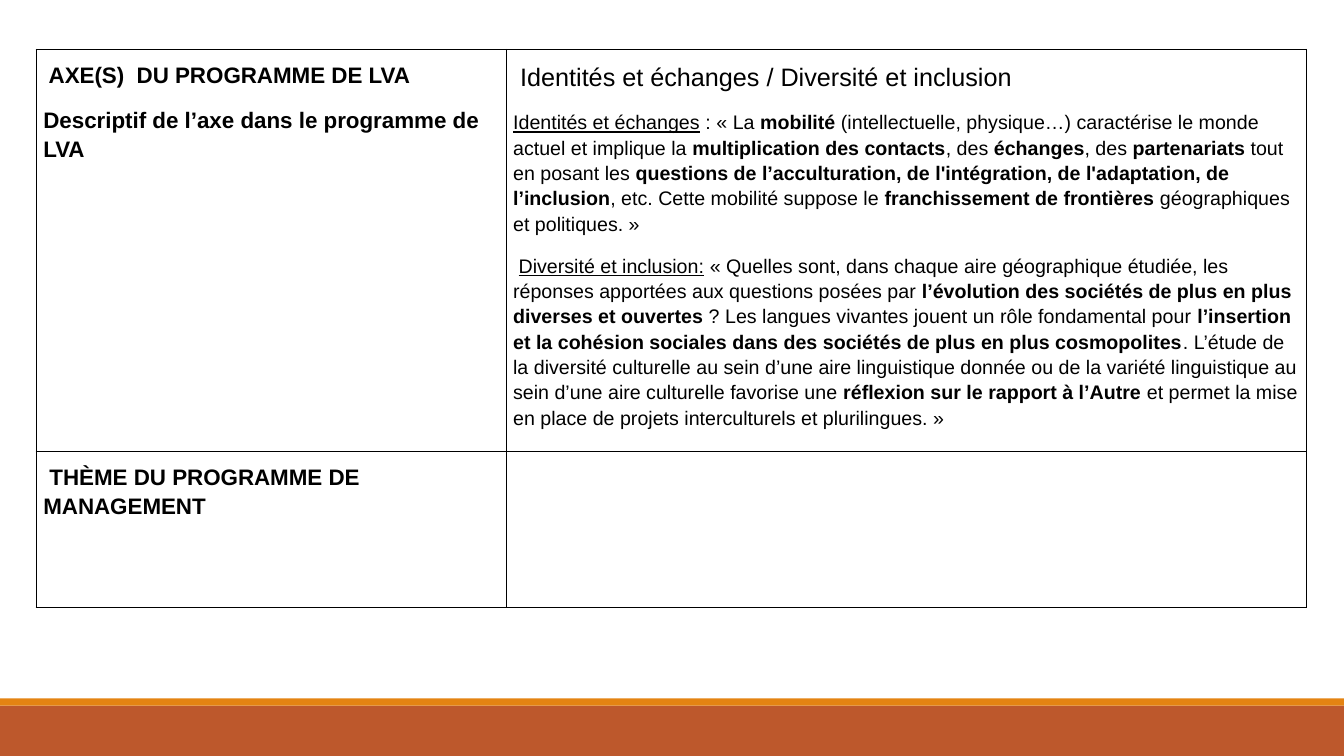
from pptx import Presentation
from pptx.dml.color import RGBColor
from pptx.enum.shapes import MSO_SHAPE
from pptx.oxml import parse_xml
from pptx.oxml.ns import nsdecls
from pptx.util import Inches, Pt

RECTANGLE = MSO_SHAPE.RECTANGLE
FONT = "Arial"
COLOURS = {"text": "000000", "border": "000000", "band": "BD582C", "stripe": "E48312"}

BANDS = [("band", 7, 0.5), ("stripe", 6.93, 0.07)]

TABLE_LEFT, TABLE_TOP = 0.36, 0.49
COLUMN_WIDTHS = [4.66, 7.94]
ROW_HEIGHTS = [3.99, 1.55]
MARGIN_SIDE, MARGIN_END = 0.07, 0.1
LINE_SPACING, GAP = 1.15, 12
BORDER_WIDTH = 1

PLAIN, BOLD, UNDERLINE = "plain", "bold", "underline"

AXIS_LABELS = [
    (16, [(" AXE(S)  DU PROGRAMME DE LVA", BOLD)]),
    (16, [("Descriptif de l’axe dans le programme de LVA", BOLD)]),
]
AXIS_TEXT = [
    (18, [(" ", BOLD), ("Identités et échanges / Diversité et inclusion", PLAIN)]),
    (14, [
        ("Identités et échanges", UNDERLINE),
        (" : « La ", PLAIN),
        ("mobilité ", BOLD),
        ("(intellectuelle, physique…) caractérise le monde actuel et implique la ", PLAIN),
        ("multiplication des contacts", BOLD),
        (", des ", PLAIN),
        ("échanges", BOLD),
        (", des ", PLAIN),
        ("partenariats", BOLD),
        (" tout en posant les ", PLAIN),
        ("questions de l’acculturation, de l'intégration, de l'adaptation, de l’inclusion", BOLD),
        (", etc. Cette mobilité suppose le ", PLAIN),
        ("franchissement de frontières ", BOLD),
        ("géographiques et politiques. »", PLAIN),
    ]),
    (14, [
        (" ", PLAIN),
        ("Diversité et inclusion:", UNDERLINE),
        (" « Quelles sont, dans chaque aire géographique étudiée, les réponses apportées "
         "aux questions posées par ", PLAIN),
        ("l’évolution des sociétés de plus en plus diverses et ouvertes", BOLD),
        (" ? Les langues vivantes jouent un rôle fondamental pour ", PLAIN),
        ("l’insertion et la cohésion sociales dans des sociétés de plus en plus cosmopolites", BOLD),
        (". L’étude de la diversité culturelle au sein d’une aire linguistique donnée ou de "
         "la variété linguistique au sein d’une aire culturelle favorise une ", PLAIN),
        ("réflexion sur le rapport à l’Autre", BOLD),
        (" et permet la mise en place de projets interculturels et plurilingues. »", PLAIN),
    ]),
]
THEME_LABEL = [(16, [(" THÈME DU PROGRAMME DE MANAGEMENT", BOLD)])]
CELLS = [[AXIS_LABELS, AXIS_TEXT], [THEME_LABEL, []]]


def colour(name):
    return RGBColor.from_string(COLOURS[name])


def add_band(slide, width, name, top, height):
    band = slide.shapes.add_shape(RECTANGLE, 0, Inches(top), width, Inches(height))
    band.shadow.inherit = False
    band.fill.solid()
    band.fill.fore_color.rgb = colour(name)
    band.line.fill.background()


def add_borders(cell):
    properties = cell._tc.get_or_add_tcPr()
    for position, side in enumerate(("lnL", "lnR", "lnT", "lnB")):
        border = parse_xml(
            f'<a:{side} {nsdecls("a")} w="{Pt(BORDER_WIDTH)}"><a:solidFill>'
            f'<a:srgbClr val="{COLOURS["border"]}"/></a:solidFill></a:{side}>'
        )
        properties.insert(position, border)


def fill_text(frame, paragraphs):
    for index, (size, spans) in enumerate(paragraphs):
        para = frame.paragraphs[0] if index == 0 else frame.add_paragraph()
        para.line_spacing = LINE_SPACING
        para.space_before = Pt(GAP)
        para.space_after = Pt(GAP if index == len(paragraphs) - 1 else 0)
        for text, style in spans:
            span = para.add_run()
            span.text = text
            span.font.name = FONT
            span.font.size = Pt(size)
            span.font.bold = style == BOLD
            span.font.underline = style == UNDERLINE
            span.font.color.rgb = colour("text")


def add_programme_table(slide):
    frame = slide.shapes.add_table(
        len(ROW_HEIGHTS), len(COLUMN_WIDTHS), Inches(TABLE_LEFT), Inches(TABLE_TOP),
        Inches(sum(COLUMN_WIDTHS)), Inches(sum(ROW_HEIGHTS)),
    )
    table = frame.table
    table.first_row = table.horz_banding = False
    for column, width in zip(table.columns, COLUMN_WIDTHS):
        column.width = Inches(width)
    for row, height, contents in zip(table.rows, ROW_HEIGHTS, CELLS):
        row.height = Inches(height)
        for cell, paragraphs in zip(row.cells, contents):
            cell.margin_left = cell.margin_right = Inches(MARGIN_SIDE)
            cell.margin_top = cell.margin_bottom = Inches(MARGIN_END)
            cell.fill.background()
            add_borders(cell)
            fill_text(cell.text_frame, paragraphs)


def main():
    """Build the slide that links the language axes to the management programme."""
    deck = Presentation()
    deck.slide_width, deck.slide_height = Inches(13.33), Inches(7.5)
    slide = deck.slides.add_slide(deck.slide_layouts[6])
    for name, top, height in BANDS:
        add_band(slide, deck.slide_width, name, top, height)
    add_programme_table(slide)
    deck.save("out.pptx")


if __name__ == "__main__":
    main()
